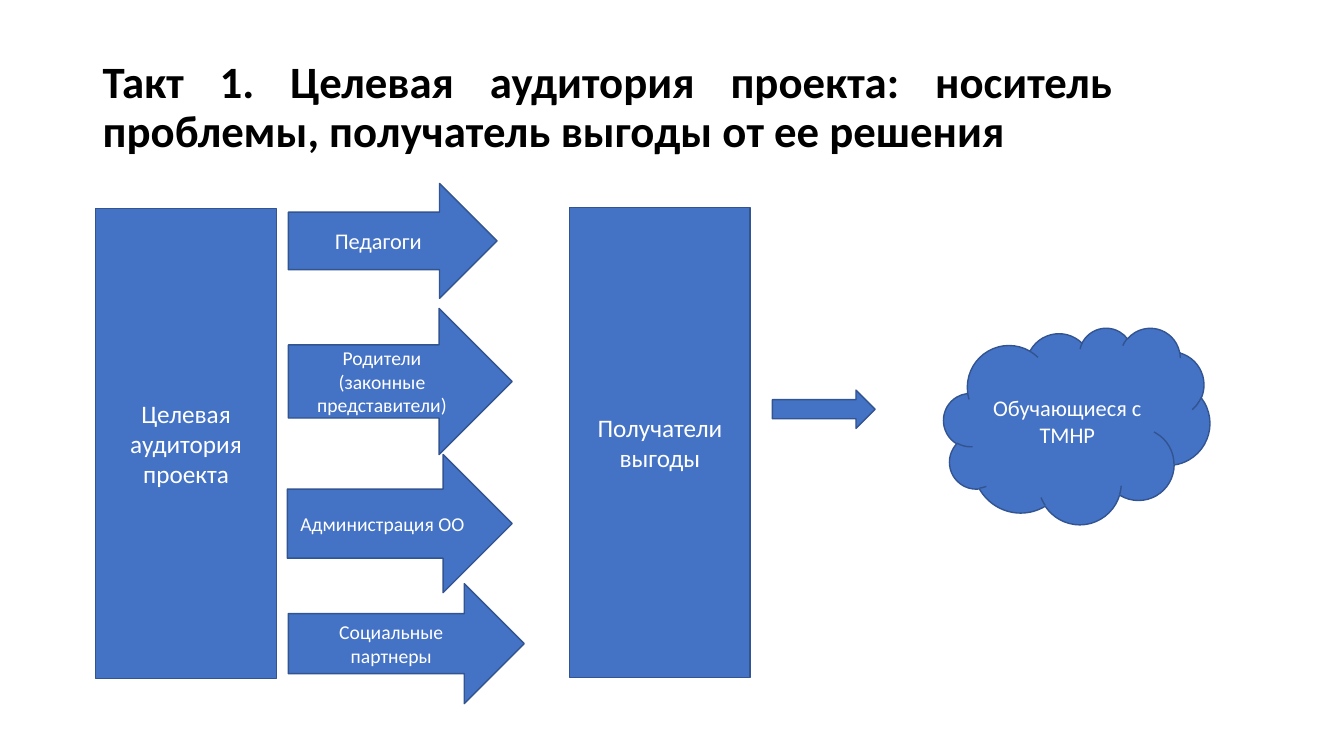
"""Build the slide on the target audience of the project and those who benefit."""
from dataclasses import dataclass

from pptx import Presentation
from pptx.dml.color import RGBColor
from pptx.enum.shapes import MSO_SHAPE
from pptx.enum.text import MSO_ANCHOR, PP_ALIGN
from pptx.util import Inches, Pt

TITLE = "Такт 1. Целевая аудитория проекта: носитель проблемы, получатель выгоды от ее решения"
TITLE_PLACE = (0.92, 0.33, 10.22, 1.49)


@dataclass(frozen=True)
class Theme:
    font: str = "Calibri"
    fill: RGBColor = RGBColor(0x44, 0x72, 0xC4)
    outline: RGBColor = RGBColor(0x32, 0x54, 0x91)
    title_color: RGBColor = RGBColor(0, 0, 0)
    label_color: RGBColor = RGBColor(255, 255, 255)
    title: int = 32
    block: int = 18
    label: int = 16
    small: int = 14


THEME = Theme()
ARROW = MSO_SHAPE.RIGHT_ARROW
BLOCK = MSO_SHAPE.RECTANGLE
CLOUD = MSO_SHAPE.CLOUD

SHAPES = [
    (ARROW, (2.86, 1.82, 2.07, 1.14), ["Педагоги"], THEME.label),
    (ARROW, (2.86, 3.06, 2.22, 1.45), ["Родители (законные представители)"], THEME.small),
    (ARROW, (2.86, 5.79, 2.34, 1.19), ["Социальные партнеры"], THEME.small),
    (ARROW, (2.85, 4.51, 2.23, 1.37), ["Администрация ОО"], THEME.small),
    (BLOCK, (0.95, 2.07, 1.79, 4.66), ["Целевая аудитория", "проекта"], THEME.block),
    (BLOCK, (5.65, 2.06, 1.79, 4.66), ["Получатели выгоды"], THEME.block),
    (ARROW, (7.66, 3.87, 1.02, 0.38), [], THEME.label),
    (CLOUD, (9.36, 3.25, 2.64, 1.95), ["Обучающиеся с ТМНР"], THEME.label),
]


def write(box, lines, size, color, align, bold=False, spacing=1.0):
    frame = box.text_frame
    frame.word_wrap = True
    frame.vertical_anchor = MSO_ANCHOR.MIDDLE
    for index, line in enumerate(lines):
        para = frame.add_paragraph() if index else frame.paragraphs[0]
        para.alignment = align
        para.line_spacing = spacing
        span = para.add_run()
        span.text = line
        span.font.name = THEME.font
        span.font.size = Pt(size)
        span.font.bold = bold
        span.font.color.rgb = color


def add_title(page):
    box = page.shapes.add_textbox(*map(Inches, TITLE_PLACE))
    write(box, [TITLE], THEME.title, THEME.title_color, PP_ALIGN.JUSTIFY, bold=True, spacing=0.9)


def add_figure(page, kind, place, lines, size):
    shape = page.shapes.add_shape(kind, *map(Inches, place))
    shape.shadow.inherit = False
    shape.fill.solid()
    shape.fill.fore_color.rgb = THEME.fill
    shape.line.color.rgb = THEME.outline
    shape.line.width = Pt(1)
    write(shape, lines, size, THEME.label_color, PP_ALIGN.CENTER)


def main():
    deck = Presentation()
    deck.slide_width, deck.slide_height = Inches(13.33), Inches(7.5)
    page = deck.slides.add_slide(deck.slide_layouts[6])
    add_title(page)
    for figure in SHAPES:
        add_figure(page, *figure)
    deck.save("out.pptx")


if __name__ == "__main__":
    main()
